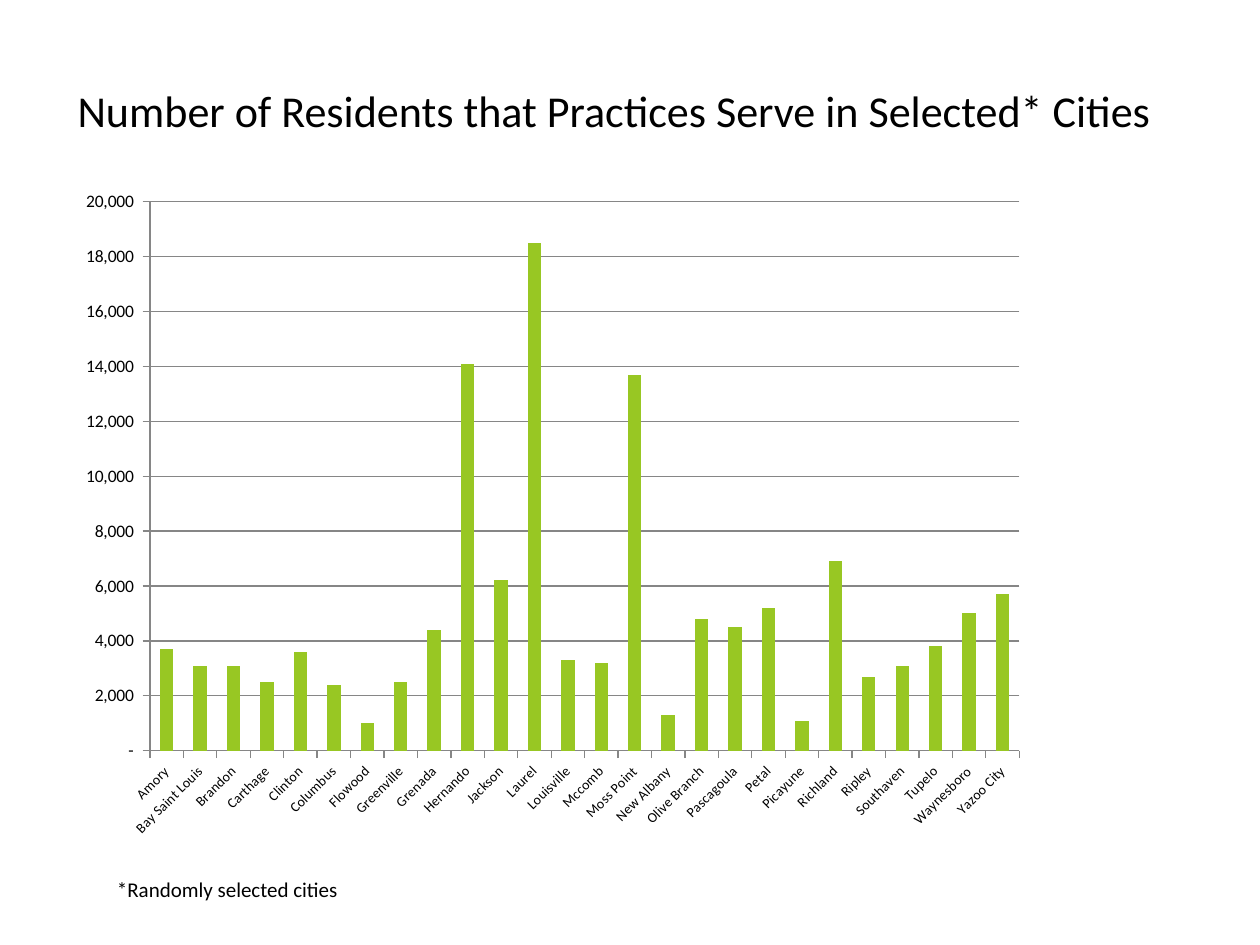
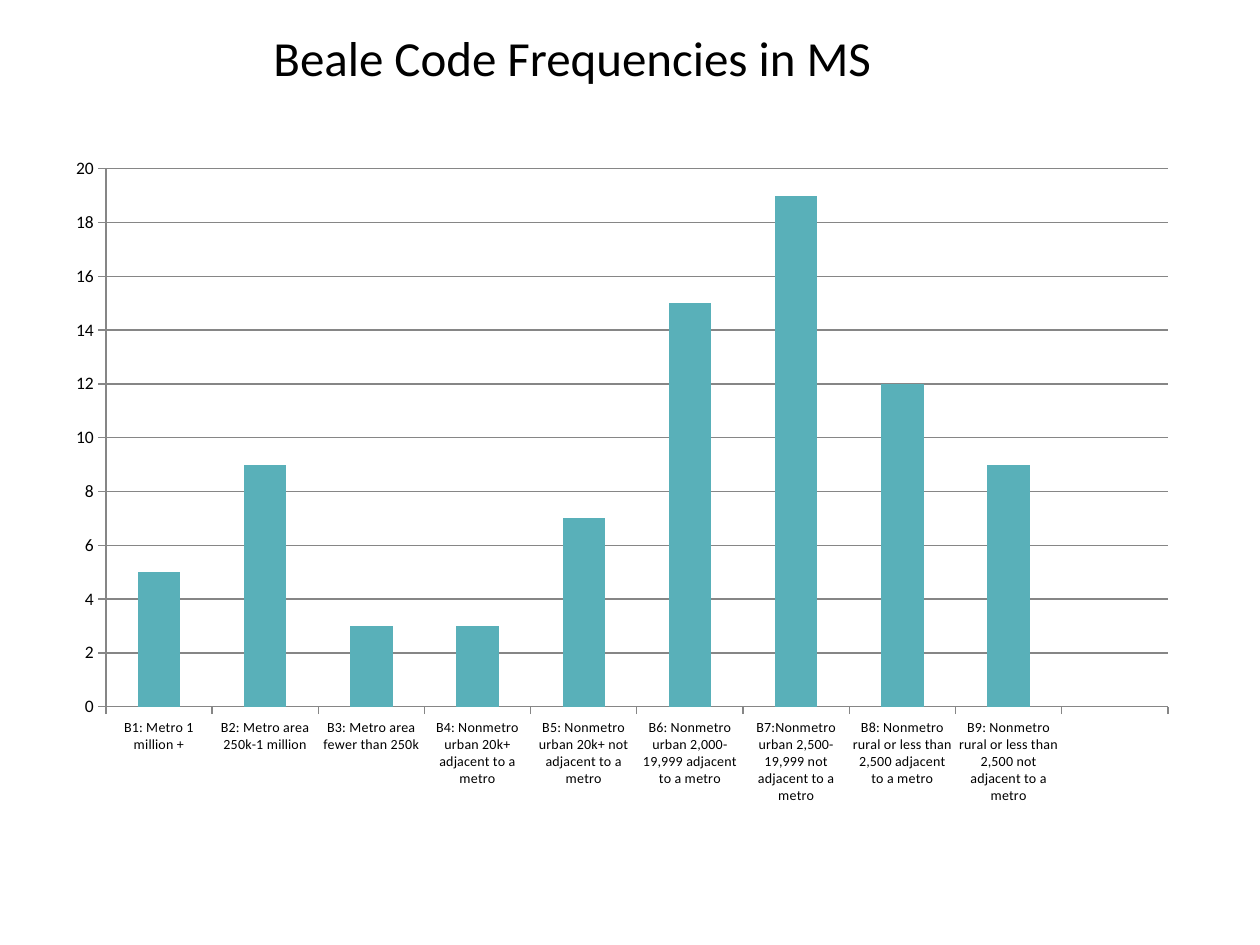
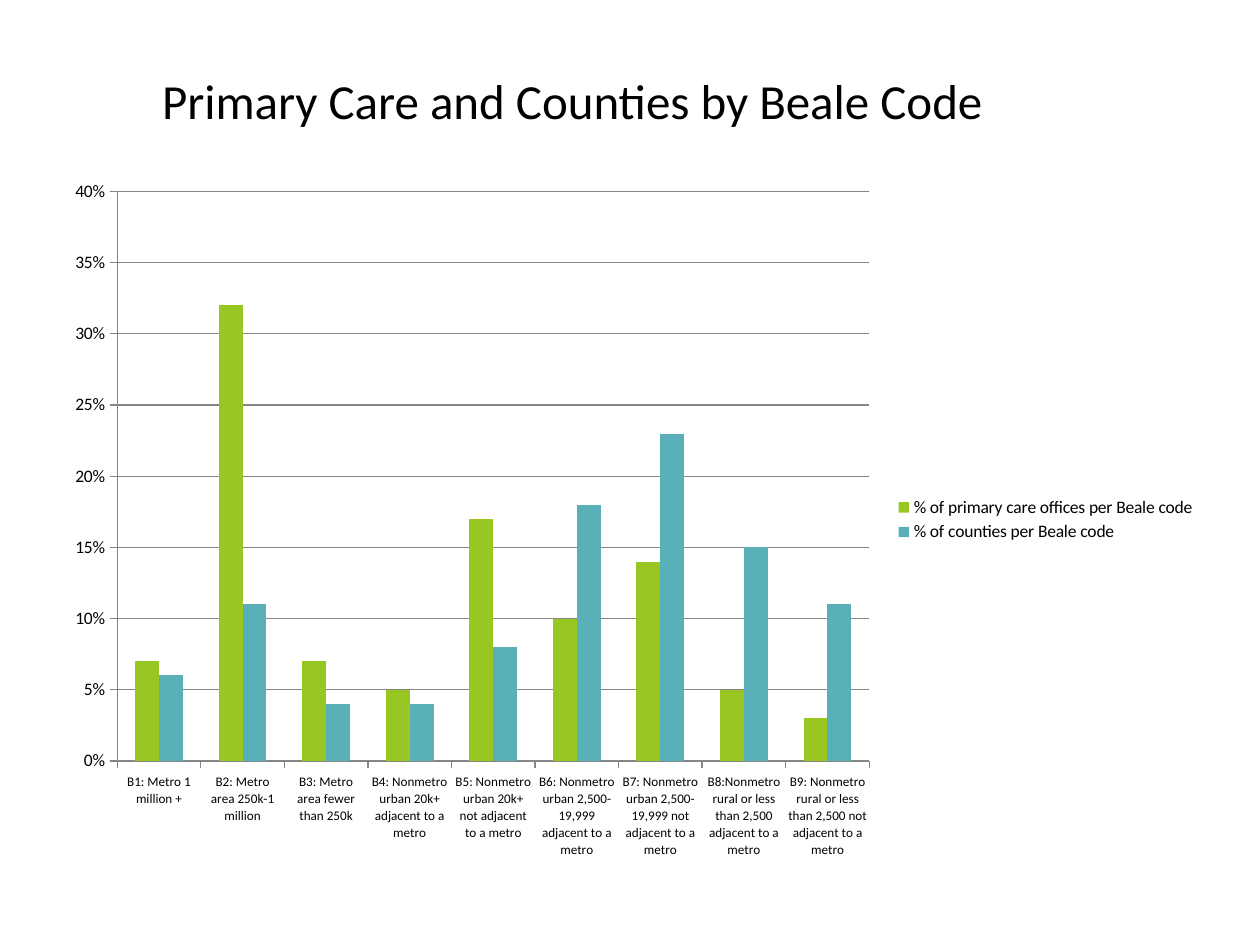
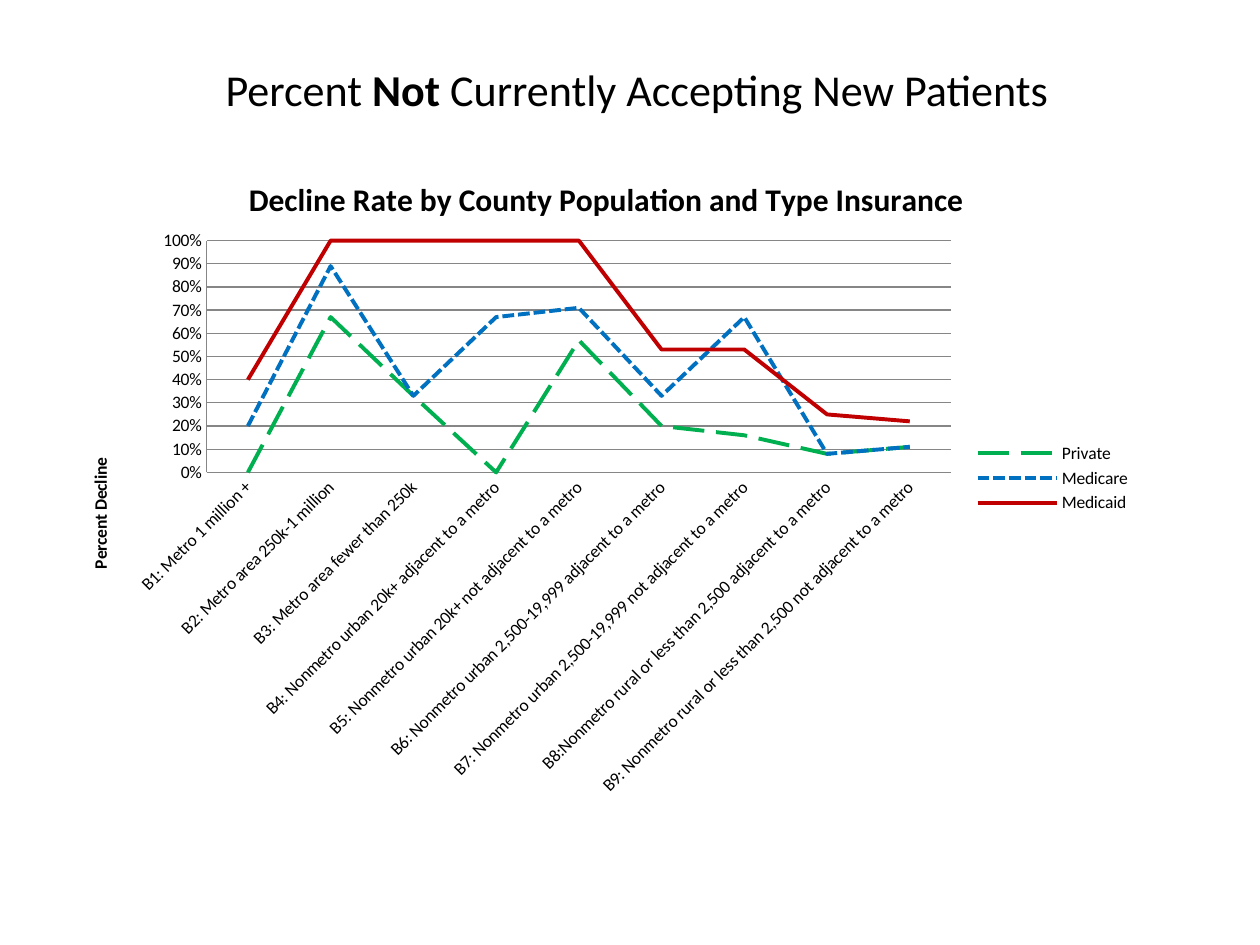
from dataclasses import dataclass

from lxml import etree
from pptx import Presentation
from pptx.chart.data import CategoryChartData
from pptx.dml.color import RGBColor
from pptx.enum.chart import XL_CHART_TYPE, XL_LEGEND_POSITION, XL_TICK_MARK
from pptx.enum.dml import MSO_LINE
from pptx.enum.text import MSO_ANCHOR, MSO_AUTO_SIZE, PP_ALIGN
from pptx.oxml.ns import qn
from pptx.util import Inches, Pt


@dataclass(frozen=True)
class Theme:
    font: str = "Calibri"
    text: RGBColor = RGBColor(0x00, 0x00, 0x00)
    grid: RGBColor = RGBColor(0x86, 0x86, 0x86)
    lime: RGBColor = RGBColor(0x98, 0xC7, 0x23)
    teal: RGBColor = RGBColor(0x59, 0xB0, 0xB9)
    green: RGBColor = RGBColor(0x00, 0xB0, 0x50)
    blue: RGBColor = RGBColor(0x00, 0x70, 0xC0)
    red: RGBColor = RGBColor(0xC0, 0x00, 0x00)
    title_size: float = 28
    long_title_size: float = 25.2
    chart_title_size: float = 18
    note_size: float = 12
    chart_size: float = 10
    category_size: float = 8
    dense_category_size: float = 7.5
    grid_width: float = 0.75
    series_width: float = 2.25


THEME = Theme()

# Data shared by the charts
RESIDENTS = {
    "Amory": 3700, "Bay Saint Louis": 3100, "Brandon": 3100, "Carthage": 2500,
    "Clinton": 3600, "Columbus": 2400, "Flowood": 1000, "Greenville": 2500,
    "Grenada": 4400, "Hernando": 14100, "Jackson": 6200, "Laurel": 18500,
    "Louisville": 3300, "Mccomb": 3200, "Moss Point": 13700, "New Albany": 1300,
    "Olive Branch": 4800, "Pascagoula": 4500, "Petal": 5200, "Picayune": 1100,
    "Richland": 6900, "Ripley": 2700, "Southaven": 3100, "Tupelo": 3800,
    "Waynesboro": 5000, "Yazoo City": 5700,
}
BEALE_CODES = [
    "B1: Metro 1 million +",
    "B2: Metro area 250k-1 million",
    "B3: Metro area fewer than 250k",
    "B4: Nonmetro urban 20k+ adjacent to a metro",
    "B5: Nonmetro urban 20k+ not adjacent to a metro",
    "B6: Nonmetro urban 2,500-19,999 adjacent to a metro",
    "B7: Nonmetro urban 2,500-19,999 not adjacent to a metro",
    "B8:Nonmetro rural or less than 2,500 adjacent to a metro",
    "B9: Nonmetro rural or less than 2,500 not adjacent to a metro",
]
FREQUENCY_CODES = BEALE_CODES[:5] + [
    "B6: Nonmetro urban 2,000-19,999 adjacent to a metro",
    "B7:Nonmetro urban 2,500-19,999 not adjacent to a metro",
    "B8: Nonmetro rural or less than 2,500 adjacent to a metro",
    BEALE_CODES[8],
    "",
]
THOUSANDS = r'_(* #,##0_);_(* \(#,##0\);_(* "-"_);_(@_)'


def style_font(font, size, bold=False):
    font.name = THEME.font
    font.size = Pt(size)
    font.bold = bold
    font.color.rgb = THEME.text


def style_line(line, color, width):
    line.color.rgb = color
    line.width = Pt(width)


# Text regions
def add_title_slide(presentation, box, runs, size, align=PP_ALIGN.CENTER):
    """Runs are (text, bold) pairs."""
    slide = presentation.slides.add_slide(presentation.slide_layouts[5])
    title = slide.shapes.title
    title.left, title.top, title.width, title.height = map(Inches, box)
    frame = title.text_frame
    frame.auto_size = MSO_AUTO_SIZE.NONE
    frame.vertical_anchor = MSO_ANCHOR.MIDDLE
    paragraph = frame.paragraphs[0]
    paragraph.alignment = align
    for text, bold in runs:
        run = paragraph.add_run()
        run.text = text
        style_font(run.font, size, bold)
    return slide


def add_note(slide, box, text):
    frame = slide.shapes.add_textbox(*map(Inches, box)).text_frame
    frame.word_wrap = True
    frame.text = text
    style_font(frame.paragraphs[0].runs[0].font, THEME.note_size)


# Chart parts
def set_layout(parent, **settings):
    """Place a plot area or title by fractions of the chart."""
    for old in parent.findall(qn("c:layout")):
        parent.remove(old)
    layout = etree.Element(qn("c:layout"))
    manual = etree.SubElement(layout, qn("c:manualLayout"))
    for name, value in settings.items():
        etree.SubElement(manual, qn(f"c:{name}")).set("val", str(value))
    parent.insert(len(parent.findall(qn("c:tx"))), layout)


def style_axis(axis, size, tick):
    axis.major_tick_mark = tick
    axis.minor_tick_mark = XL_TICK_MARK.NONE
    style_font(axis.tick_labels.font, size)
    style_line(axis.format.line, THEME.grid, THEME.grid_width)


def add_chart(slide, kind, box, plot, categories, series, category_size,
              number_format="General", maximum=None, slanted=False,
              tick=XL_TICK_MARK.OUTSIDE):
    """Plot is left, top, width and height in inches within the box."""
    data = CategoryChartData(number_format=number_format)
    data.categories = categories
    for name, values in series:
        data.add_series(name, values)
    chart = slide.shapes.add_chart(kind, *map(Inches, box), data).chart
    style_font(chart.font, THEME.chart_size)
    chart.has_title = False
    chart.has_legend = len(series) > 1
    if chart.has_legend:
        chart.legend.position = XL_LEGEND_POSITION.RIGHT
        chart.legend.include_in_layout = False
        style_font(chart.legend.font, THEME.chart_size)
    chart.plots[0].vary_by_categories = False

    style_axis(chart.category_axis, category_size, tick)
    style_axis(chart.value_axis, THEME.chart_size, tick)
    if slanted:
        for body in chart.element.xpath(".//c:catAx/c:txPr/a:bodyPr"):
            body.set("rot", "-2700000")
    value_axis = chart.value_axis
    value_axis.minimum_scale = 0
    if maximum:
        value_axis.maximum_scale = maximum
    value_axis.has_major_gridlines = True
    style_line(value_axis.major_gridlines.format.line, THEME.grid, THEME.grid_width)
    value_axis.tick_labels.number_format = number_format
    value_axis.tick_labels.number_format_is_linked = False

    left, top, width, height = plot
    set_layout(chart.element.xpath(".//c:plotArea")[0],
               layoutTarget="inner", xMode="edge", yMode="edge",
               x=left / box[2], y=top / box[3],
               w=width / box[2], h=height / box[3])
    return chart


def add_column_chart(slide, box, plot, categories, series, colors, category_size,
                     **options):
    chart = add_chart(slide, XL_CHART_TYPE.COLUMN_CLUSTERED, box, plot, categories,
                      series, category_size, **options)
    chart.plots[0].gap_width = 150
    chart.plots[0].overlap = 0
    for column, color in zip(chart.plots[0].series, colors):
        column.invert_if_negative = False
        column.format.fill.solid()
        column.format.fill.fore_color.rgb = color


def add_decline_chart(slide, box, plot, series, strokes):
    chart = add_chart(slide, XL_CHART_TYPE.LINE, box, plot, BEALE_CODES, series,
                      THEME.chart_size, number_format="0%", maximum=1,
                      slanted=True, tick=XL_TICK_MARK.NONE)
    chart.value_axis.major_unit = 0.1
    for line, (color, dash) in zip(chart.plots[0].series, strokes):
        line.smooth = False
        style_line(line.format.line, color, THEME.series_width)
        line.format.line.dash_style = dash

    # Chart title and value axis title, placed in inches within the box
    chart.has_title = True
    for title, text, size, query, left, top in (
        (chart.chart_title, "Decline Rate by County Population and Type Insurance",
         THEME.chart_title_size, "./c:chart/c:title", 1.43, 0.19),
        (chart.value_axis.axis_title, "Percent Decline", THEME.chart_size,
         ".//c:valAx/c:title", 0.18, 2.44),
    ):
        title.text_frame.text = text
        style_font(title.text_frame.paragraphs[0].runs[0].font, size, bold=True)
        set_layout(chart.element.xpath(query)[0], xMode="edge", yMode="edge",
                   x=left / box[2], y=top / box[3])


# Slides
def build_residents(presentation):
    slide = add_title_slide(
        presentation, (0.5, 0.41, 8.75, 0.92),
        [("Number of Residents that Practices Serve in Selected* Cities", False)],
        THEME.long_title_size)
    add_column_chart(
        slide, (0.5, 1.42, 7.75, 5.33), (0.69, 0.18, 6.9, 4.36),
        list(RESIDENTS), [("Series 1", list(RESIDENTS.values()))], [THEME.lime],
        THEME.category_size, number_format=THOUSANDS, slanted=True)
    add_note(slide, (0.83, 6.91, 5, 0.3), "*Randomly selected cities")


def build_frequencies(presentation):
    slide = add_title_slide(
        presentation, (0.75, 0.08, 7.67, 0.75),
        [("Beale Code Frequencies in MS ", False)], THEME.title_size)
    add_column_chart(
        slide, (0.42, 1.16, 9.03, 5.34), (0.42, 0.18, 8.43, 4.27),
        FREQUENCY_CODES, [("Series 1", [5, 9, 3, 3, 7, 15, 19, 12, 9, None])],
        [THEME.teal], THEME.category_size)


def build_comparison(presentation):
    slide = add_title_slide(
        presentation, (0.75, 0.5, 7.67, 0.58),
        [("Primary Care and Counties by Beale Code ", False)], THEME.title_size)
    series = [
        ("% of primary care offices per Beale code",
         [0.07, 0.32, 0.07, 0.05, 0.17, 0.1, 0.14, 0.05, 0.03]),
        ("% of counties per Beale code",
         [0.06, 0.11, 0.04, 0.04, 0.08, 0.18, 0.23, 0.15, 0.11]),
    ]
    add_column_chart(
        slide, (0.42, 1.33, 9.17, 5.59), (0.51, 0.19, 5.97, 4.52),
        BEALE_CODES, series, [THEME.lime, THEME.teal], THEME.dense_category_size,
        number_format="0%", maximum=0.4)


def build_decline(presentation):
    slide = add_title_slide(
        presentation, (1.25, 0.33, 7.17, 0.75),
        [("Percent ", False), ("Not", True),
         (" Currently Accepting New Patients", False)],
        THEME.long_title_size, PP_ALIGN.RIGHT)
    series = [
        ("Private", [0, 0.67, 0.33, 0, 0.57, 0.2, 0.16, 0.08, 0.11]),
        ("Medicare", [0.2, 0.89, 0.33, 0.67, 0.71, 0.33, 0.67, 0.08, 0.11]),
        ("Medicaid", [0.4, 1, 1, 1, 1, 0.53, 0.53, 0.25, 0.22]),
    ]
    strokes = [(THEME.green, MSO_LINE.LONG_DASH), (THEME.blue, MSO_LINE.SQUARE_DOT),
               (THEME.red, MSO_LINE.SOLID)]
    add_decline_chart(slide, (0.5, 1.17, 8.58, 5.25), (1.14, 0.74, 5.91, 1.84),
                      series, strokes)


def main():
    presentation = Presentation()
    presentation.slide_width = Inches(10)
    presentation.slide_height = Inches(7.5)
    for build in (build_residents, build_frequencies, build_comparison, build_decline):
        build(presentation)
    presentation.save("out.pptx")


if __name__ == "__main__":
    main()
